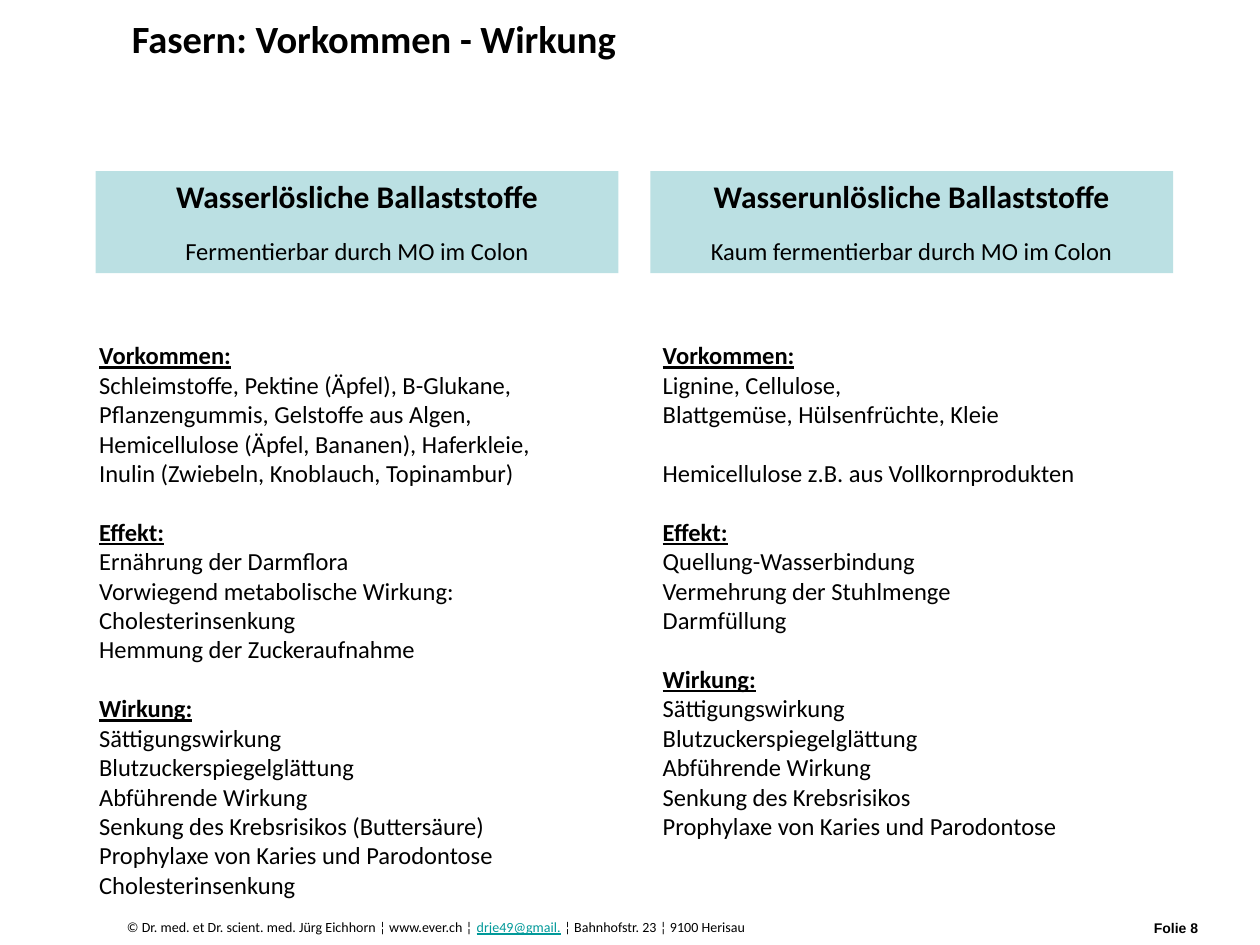
from pptx import Presentation
from pptx.dml.color import RGBColor
from pptx.enum import shapes, text
from pptx.util import Cm, Pt

COLORS = {"ink": "000000", "header": "BBE0E3", "link": "009999"}

HEADERS = [
    ((1.93, 3.45, 10.54, 2.06), "Wasserlösliche Ballaststoffe", "Fermentierbar durch MO im Colon"),
    ((13.11, 3.45, 10.54, 2.06), "Wasserunlösliche Ballaststoffe", "Kaum fermentierbar durch MO im Colon"),
]

BODIES = [
    ((1.75, 6.25, 10.36, 11.89), [
        ["Vorkommen:", "Schleimstoffe, Pektine (Äpfel), B-Glukane,",
         "Pflanzengummis, Gelstoffe aus Algen,",
         "Hemicellulose (Äpfel, Bananen), Haferkleie,",
         "Inulin (Zwiebeln, Knoblauch, Topinambur)"],
        ["Effekt:", "Ernährung der Darmflora", "Vorwiegend metabolische Wirkung:",
         "Cholesterinsenkung", "Hemmung der Zuckeraufnahme"],
        ["Wirkung:", "Sättigungswirkung", "Blutzuckerspiegelglättung",
         "Abführende Wirkung", "Senkung des Krebsrisikos (Buttersäure)",
         "Prophylaxe von Karies und Parodontose", "Cholesterinsenkung"],
    ]),
    ((13.11, 6.25, 11, 11.89), [
        ["Vorkommen:", "Lignine, Cellulose,", "Blattgemüse, Hülsenfrüchte, Kleie"],
        ["Hemicellulose z.B. aus Vollkornprodukten"],
        ["Effekt:", "Quellung-Wasserbindung", "Vermehrung der Stuhlmenge", "Darmfüllung"],
        ["Wirkung:", "Sättigungswirkung", "Blutzuckerspiegelglättung",
         "Abführende Wirkung", "Senkung des Krebsrisikos",
         "Prophylaxe von Karies und Parodontose"],
    ]),
]

FOOTER = [
    ("© Dr. med. et Dr. scient. med. Jürg Eichhorn ¦ www.ever.ch ¦ ", "ink"),
    ("drje49@gmail.", "link"),
    (" ¦ Bahnhofstr. 23 ¦ 9100 Herisau", "ink"),
]


def style(font, size, bold=False, underline=False, color="ink", name="Calibri"):
    """Set the look of a font."""
    font.name, font.size, font.bold, font.underline = name, Pt(size), bold, underline
    font.color.rgb = RGBColor.from_string(COLORS[color])


def hang(para, indent):
    """Give a paragraph a hanging indent."""
    props = para._p.get_or_add_pPr()
    props.set("marL", str(Cm(indent)))
    props.set("indent", str(-Cm(indent)))


def add_text_box(page, box):
    """Add a wrapping text box and return its frame."""
    frame = page.shapes.add_textbox(*map(Cm, box)).text_frame
    frame.word_wrap = True
    return frame


def add_title(page, box, title):
    """Place the slide title."""
    frame = add_text_box(page, box)
    frame.vertical_anchor = text.MSO_ANCHOR.MIDDLE
    frame.text = title
    hang(frame.paragraphs[0], 0.95)
    style(frame.paragraphs[0].runs[0].font, 22, bold=True)


def add_header(page, box, heading, subheading):
    """Place the coloured header of a column."""
    header = page.shapes.add_shape(shapes.MSO_SHAPE.RECTANGLE, *map(Cm, box))
    header.shadow.inherit = False
    header.fill.solid()
    header.fill.fore_color.rgb = RGBColor.from_string(COLORS["header"])
    header.line.fill.background()
    frame = header.text_frame
    frame.vertical_anchor = text.MSO_ANCHOR.TOP
    frame.text = f"{heading}\n{subheading}"
    for para, size, bold in zip(frame.paragraphs, (18, 14), (True, False)):
        para.alignment = text.PP_ALIGN.CENTER
        style(para.runs[0].font, size, bold)
    frame.paragraphs[0].space_after = Pt(12)


def add_body(page, box, sections):
    """Place the sections of a column, set apart by one line."""
    frame = add_text_box(page, box)
    frame.margin_top, frame.margin_bottom = Cm(0.61), 0
    frame.text = "\n".join(line for section in sections for line in section)
    paras = iter(frame.paragraphs)
    for number, section in enumerate(sections):
        for position, line in enumerate(section):
            para = next(paras)
            hang(para, 1.27)
            if number and position == 0:
                para.space_before = Pt(16.8)
            is_label = position == 0 and line.endswith(":")
            style(para.runs[0].font, 14, is_label, is_label)


def add_footer(page, box, number):
    """Place the copyright line and the slide number."""
    left, top, width, height = box
    para = add_text_box(page, (left, top, 20.6, height)).paragraphs[0]
    for words, color in FOOTER:
        span = para.add_run()
        span.text = words
        style(span.font, 8, underline=color == "link", color=color)
    frame = add_text_box(page, (left + width - 2.39, top + 0.02, 2.39, height))
    frame.text = number
    style(frame.paragraphs[0].runs[0].font, 8, bold=True, name="Arial")


def main():
    """Build the slide and save it."""
    deck = Presentation()
    deck.slide_width, deck.slide_height = Cm(25.4), Cm(19.05)
    page = deck.slides.add_slide(deck.slide_layouts[6])
    add_footer(page, (2.31, 18.39, 23.09, 0.58), "Folie 8")
    add_title(page, (2.41, 0.13, 16.31, 1.27), "Fasern: Vorkommen - Wirkung")
    for box, heading, subheading in HEADERS:
        add_header(page, box, heading, subheading)
    for box, sections in BODIES:
        add_body(page, box, sections)
    deck.save("out.pptx")


if __name__ == "__main__":
    main()
